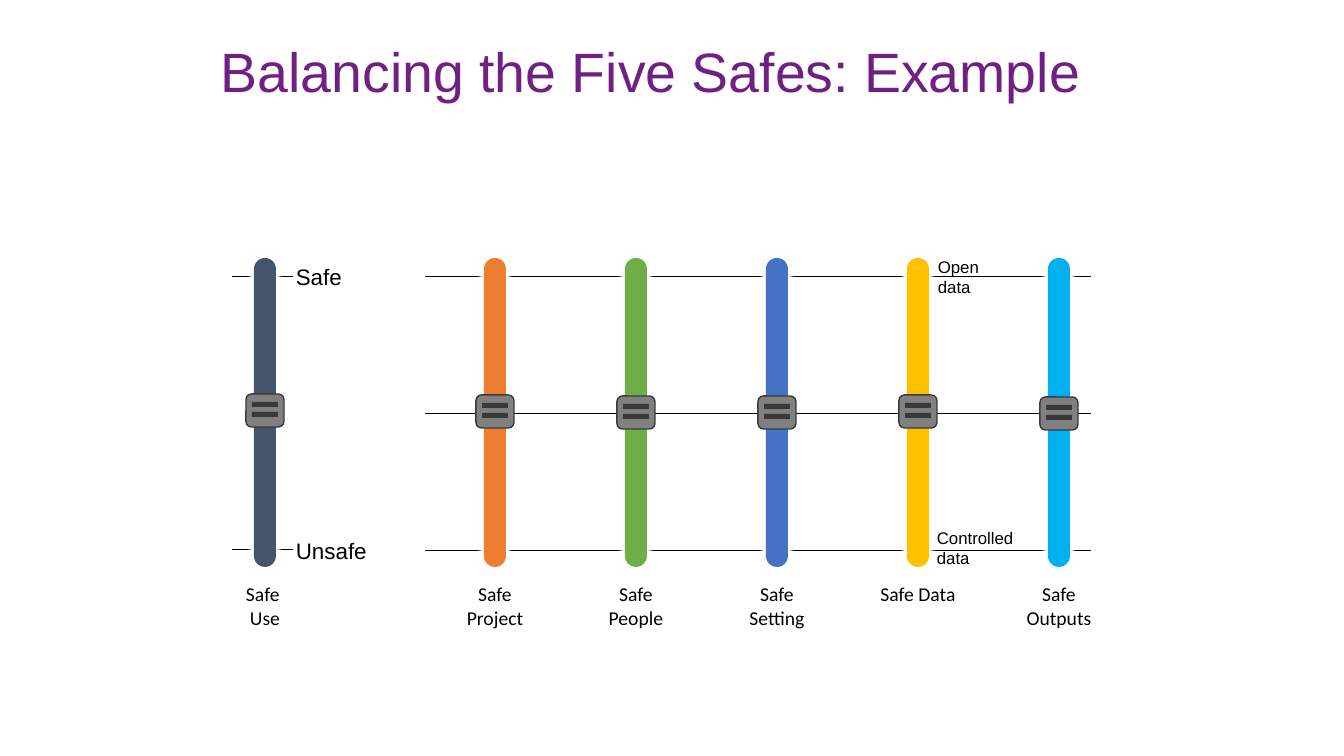
from typing import NamedTuple

from lxml.etree import SubElement
from pptx import Presentation
from pptx.dml.color import RGBColor
from pptx.enum.shapes import MSO_CONNECTOR, MSO_SHAPE as Shape
from pptx.enum.text import MSO_ANCHOR, MSO_AUTO_SIZE as AutoSize, PP_ALIGN as Align
from pptx.oxml.ns import qn
from pptx.util import Emu, Pt

EMU_PER_PX = 914400 / 100.8

PURPLE = RGBColor(0x70, 0x20, 0x82)
BLACK = RGBColor(0x00, 0x00, 0x00)
KNOB_GREY = RGBColor(0x80, 0x80, 0x80)
KNOB_DARK = RGBColor(0x3B, 0x38, 0x38)
SLATE = RGBColor(0x44, 0x54, 0x6A)
ORANGE = RGBColor(0xED, 0x7D, 0x31)
GREEN = RGBColor(0x70, 0xAD, 0x47)
BLUE = RGBColor(0x44, 0x72, 0xC4)
YELLOW = RGBColor(0xFF, 0xC0, 0x00)
SKY = RGBColor(0x00, 0xB0, 0xF0)

TRACK_TOP, TRACK_WIDTH, TRACK_HEIGHT = 258, 22, 309
KNOB_WIDTH, KNOB_HEIGHT = 38, 33
LABEL_TOP, LABEL_WIDTH, LABEL_HEIGHT = 577, 108, 71
FIRST_CENTRE, PITCH, USE_CENTRE = 495, 141, 265

TITLE_FORMAT = {"name": "Arial", "size": Pt(39.6)}
SLIDER_FORMAT = {"name": "Calibri", "size": Pt(14)}
END_FORMAT = {"name": "Arial", "size": Pt(16)}
NOTE_FORMAT = {"name": "Arial", "size": Pt(12)}


class Slider(NamedTuple):
    label: str
    color: RGBColor
    centre: int
    knob_top: int


class Rule(NamedTuple):
    left: int
    right: int
    y: int


class Caption(NamedTuple):
    text: str
    left: int
    top: int
    width: int
    height: int
    font: dict


SAFES = [("Safe Project", ORANGE, 395), ("Safe People", GREEN, 396),
         ("Safe Setting", BLUE, 396), ("Safe Data", YELLOW, 395),
         ("Safe Outputs", SKY, 397)]
SLIDERS = [Slider(label, color, FIRST_CENTRE + PITCH * i, knob_top)
           for i, (label, color, knob_top) in enumerate(SAFES)]
SLIDERS.append(Slider("Safe \nUse", SLATE, USE_CENTRE, 394))

RULES = [Rule(425, 1091, y) for y in (276, 413, 550)]
RULES += [Rule(232, 293, y) for y in (276, 549)]

CAPTIONS = [
    Caption("Safe", 286, 258, 95, 37, END_FORMAT),
    Caption("Unsafe", 286, 532, 95, 37, END_FORMAT),
    Caption("Open data", 928, 252, 95, 50, NOTE_FORMAT),
    Caption("Controlled data", 927, 523, 112, 50, NOTE_FORMAT),
]


def px(*lengths: int) -> list[Emu]:
    return [Emu(round(length * EMU_PER_PX)) for length in lengths]


def add_text(page, caption: Caption, align=Align.LEFT, color=BLACK):
    box = page.shapes.add_textbox(
        *px(caption.left, caption.top, caption.width, caption.height))
    frame = box.text_frame
    frame.word_wrap = True
    frame.auto_size = AutoSize.SHAPE_TO_FIT_TEXT
    frame.text = caption.text
    for para in frame.paragraphs:
        para.alignment = align
        for span in para.runs:
            for key, value in caption.font.items():
                setattr(span.font, key, value)
            span.font.color.rgb = color
    return box


def add_block(parent, kind, color, left: int, top: int, width: int, height: int):
    block = parent.shapes.add_shape(kind, *px(left, top, width, height))
    block.shadow.inherit = False
    block.fill.solid()
    block.fill.fore_color.rgb = color
    block.line.fill.background()
    return block


def add_rule(page, rule: Rule) -> None:
    line = page.shapes.add_connector(
        MSO_CONNECTOR.STRAIGHT, *px(rule.left, rule.y, rule.right, rule.y))
    line.line.color.rgb = BLACK
    line.line.width = Pt(0.5)
    SubElement(line._element.spPr, qn("a:effectLst"))


def add_track(page, slider: Slider) -> None:
    track = add_block(page, Shape.ROUNDED_RECTANGLE, slider.color,
                      slider.centre - TRACK_WIDTH // 2, TRACK_TOP,
                      TRACK_WIDTH, TRACK_HEIGHT)
    track.adjustments[0] = 0.5
    # White glow that fades the rules beside the track
    effects = track._element.spPr.find(qn("a:effectLst"))
    glow = SubElement(effects, qn("a:glow"), rad=str(Pt(5)))
    SubElement(glow, qn("a:srgbClr"), val="FFFFFF")


def add_knob(page, slider: Slider) -> None:
    knob = page.shapes.add_group_shape()
    left = slider.centre - KNOB_WIDTH // 2
    body = add_block(knob, Shape.ROUNDED_RECTANGLE, KNOB_GREY,
                     left, slider.knob_top, KNOB_WIDTH, KNOB_HEIGHT)
    body.line.color.rgb = KNOB_DARK
    body.line.width = Pt(1)
    for drop in (8, 18):
        add_block(knob, Shape.RECTANGLE, KNOB_DARK,
                  left + 6, slider.knob_top + drop, 26, 5)


def main() -> None:
    deck = Presentation()
    deck.slide_width, deck.slide_height = px(1344, 756)
    page = deck.slides.add_slide(deck.slide_layouts[6])

    # Title
    title = add_text(page, Caption("Balancing the Five Safes: Example",
                                   211, 12, 904, 126, TITLE_FORMAT), color=PURPLE)
    title.text_frame.auto_size = AutoSize.NONE
    title.text_frame.vertical_anchor = MSO_ANCHOR.MIDDLE
    title.text_frame.paragraphs[0].line_spacing = 0.9

    # Level rules behind the sliders
    for rule in RULES:
        add_rule(page, rule)

    # Sliders with their names
    for slider in SLIDERS:
        add_track(page, slider)
        add_knob(page, slider)
        add_text(page, Caption(slider.label, slider.centre - LABEL_WIDTH // 2,
                               LABEL_TOP, LABEL_WIDTH, LABEL_HEIGHT,
                               SLIDER_FORMAT), Align.CENTER)

    # Names of the scale ends
    for caption in CAPTIONS:
        add_text(page, caption)

    deck.save("out.pptx")


if __name__ == "__main__":
    main()
